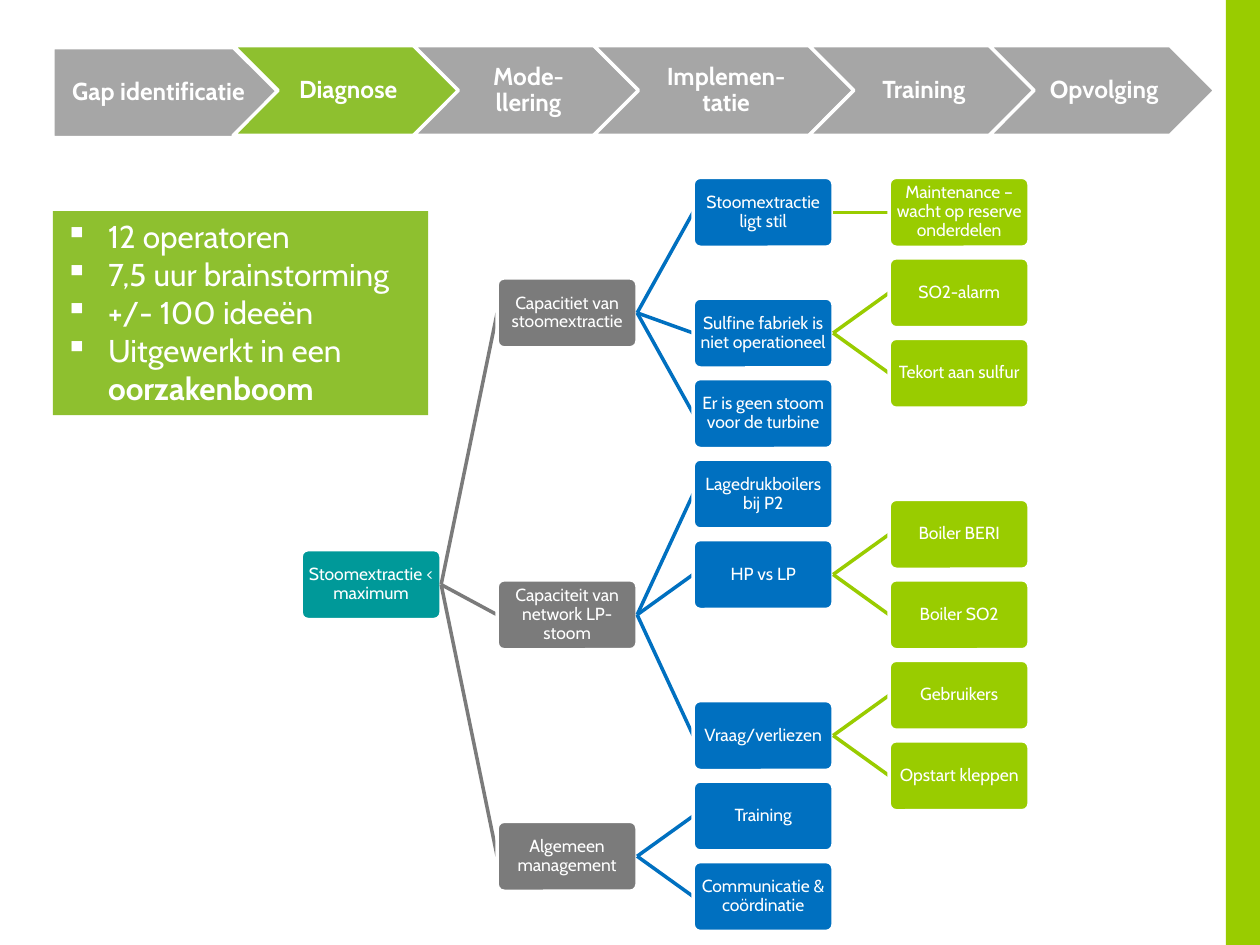
"""Build the slide with the diagnosis step and the cause tree for steam extraction."""
from dataclasses import dataclass

from lxml import etree
from pptx import Presentation
from pptx import util as u
from pptx.dml import color
from pptx.enum import shapes, text
from pptx.oxml import ns


@dataclass(frozen=True)
class Theme:
    font: str = "Cabin"
    white: str = "FFFFFF"
    lime: str = "99CC00"
    active: str = "8EC02F"
    step: str = "A6A6A6"
    levels: tuple = ("009999", "7B7B7B", "0070C0", "99CC00")
    cause_size: int = 10
    step_size: int = 14
    list_size: int = 18


theme = Theme()


def block(kind, left, top, width, height, fill, outlined=True):
    shape = slide.shapes.add_shape(kind, u.Pt(left), u.Pt(top), u.Pt(width), u.Pt(height))
    shape.shadow.inherit = False
    shape.fill.solid()
    shape.fill.fore_color.rgb = color.RGBColor.from_string(fill)
    if outlined:
        shape.line.color.rgb = color.RGBColor.from_string(theme.white)
        shape.line.width = u.Pt(2)
    else:
        shape.line.fill.background()
    return shape


def write(paragraph, wording, size, bold=False):
    run = paragraph.add_run()
    run.text = wording
    run.font.name = theme.font
    run.font.size = u.Pt(size)
    run.font.bold = bold
    run.font.color.rgb = color.RGBColor.from_string(theme.white)


deck = Presentation()
deck.slide_width, deck.slide_height = u.Pt(720), u.Pt(540)
slide = deck.slides.add_slide(deck.slide_layouts[6])

block(shapes.MSO_SHAPE.RECTANGLE, 700.5, 0, 19.5, 540, theme.lime, outlined=False)

causes = [
    (0, 4.625, "Stoomextractie < maximum"),
    (1, 1.25, "Capacitiet van stoomextractie"),
    (2, 0, "Stoomextractie ligt stil"),
    (3, 0, "Maintenance – wacht op reserve onderdelen"),
    (2, 1.5, "Sulfine fabriek is niet operationeel"),
    (3, 1, "SO2-alarm"),
    (3, 2, "Tekort aan sulfur"),
    (2, 2.5, "Er is geen stoom voor de turbine"),
    (1, 5, "Capaciteit van network LP-stoom"),
    (2, 3.5, "Lagedrukboilers bij P2"),
    (2, 4.5, "HP vs LP"),
    (3, 4, "Boiler BERI"),
    (3, 5, "Boiler SO2"),
    (2, 6.5, "Vraag/verliezen"),
    (3, 6, "Gebruikers"),
    (3, 7, "Opstart kleppen"),
    (1, 8, "Algemeen management"),
    (2, 7.5, "Training"),
    (2, 8.5, "Communicatie & coördinatie"),
]
cause_width, cause_height = 80, 40
column_pitch, row_pitch = 112, 46
tree_left, tree_top = 172.1, 101.3
latest = {}
for level, row, wording in causes:
    left, top = tree_left + level * column_pitch, tree_top + row * row_pitch
    if level:
        branch = slide.shapes.add_connector(shapes.MSO_CONNECTOR.STRAIGHT, 0, 0, 0, 0)
        branch.line.color.rgb = color.RGBColor.from_string(theme.levels[level])
        branch.line.width = u.Pt(2)
        etree.SubElement(branch._element.spPr, ns.qn("a:effectLst"))
    cause = block(shapes.MSO_SHAPE.ROUNDED_RECTANGLE, left, top,
                  cause_width, cause_height, theme.levels[level])
    cause.adjustments[0] = 0.1
    frame = cause.text_frame
    frame.word_wrap = True
    frame.vertical_anchor = text.MSO_ANCHOR.MIDDLE
    frame.margin_left = frame.margin_right = u.Pt(0.7)
    frame.margin_top = frame.margin_bottom = u.Pt(0.7)
    frame.paragraphs[0].alignment = text.PP_ALIGN.CENTER
    frame.paragraphs[0].line_spacing = 0.9
    write(frame.paragraphs[0], wording, theme.cause_size)
    if level:
        branch.begin_connect(latest[level - 1], 3)
        branch.end_connect(cause, 1)
    latest[level] = cause

session = block(shapes.MSO_SHAPE.RECTANGLE, 30.2, 120.7, 214.5, 116.6,
                theme.active, outlined=False)
session.text_frame.word_wrap = True
session.text_frame.vertical_anchor = text.MSO_ANCHOR.TOP
facts = [
    [("12 operatoren", False)],
    [("7,5 uur brainstorming", False)],
    [("+/- 100 ideeën", False)],
    [("Uitgewerkt in een ", False), ("oorzakenboom", True)],
]
for index, fact in enumerate(facts):
    line = session.text_frame.add_paragraph() if index else session.text_frame.paragraphs[0]
    line.alignment = text.PP_ALIGN.LEFT
    properties = line._p.get_or_add_pPr()
    properties.set("marL", str(u.Pt(24.5)))
    properties.set("indent", str(u.Pt(-24.5)))
    etree.SubElement(properties, ns.qn("a:buChar")).set("char", "▪")
    for wording, bold in fact:
        write(line, wording, theme.list_size, bold)

steps = [
    ("Gap identificatie", 129),
    ("Diagnose", 129),
    ("Mode-llering", 129),
    ("Implemen-tatie", 149),
    ("Training", 129),
    ("Opvolging", 129),
]
step_left, step_overlap = 30.2, 26
for index, (wording, width) in enumerate(steps):
    kind = shapes.MSO_SHAPE.CHEVRON if index else shapes.MSO_SHAPE.PENTAGON
    fill = theme.active if wording == "Diagnose" else theme.step
    step = block(kind, step_left, 26 if index else 27.2, width, 51.4, fill)
    frame = step.text_frame
    frame.word_wrap = True
    frame.vertical_anchor = text.MSO_ANCHOR.MIDDLE
    frame.margin_left, frame.margin_right = u.Pt(4 if index else 6), u.Pt(1.4)
    frame.margin_top = frame.margin_bottom = u.Pt(2.8)
    frame.paragraphs[0].alignment = text.PP_ALIGN.CENTER
    frame.paragraphs[0].line_spacing = 0.9
    write(frame.paragraphs[0], wording, theme.step_size, bold=True)
    step_left += width - step_overlap

deck.save("out.pptx")
